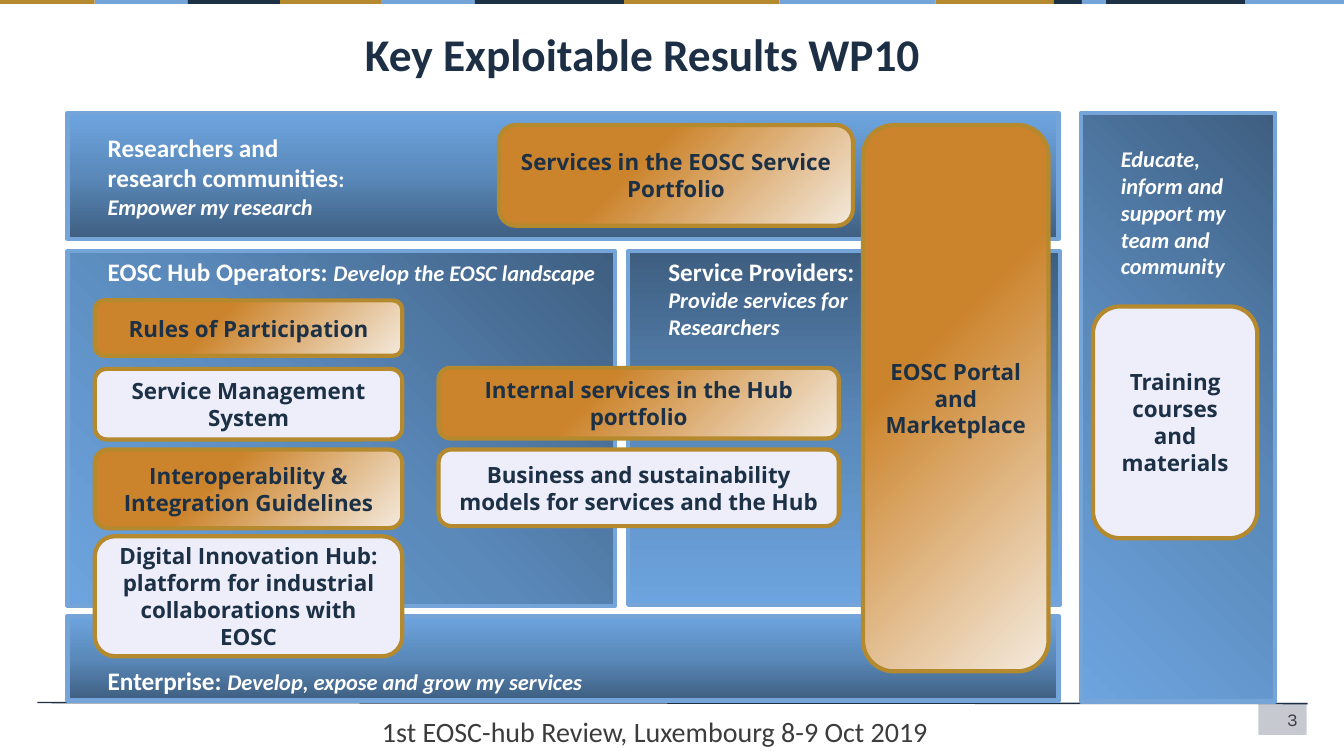
from lxml import etree
from pptx import Presentation
from pptx import util as u
from pptx.dml.color import RGBColor
from pptx.enum import shapes, text
from pptx.oxml import ns

PX = u.Inches(1) // 100
WHITE = RGBColor(0xFF, 0xFF, 0xFF)
NAVY = RGBColor(0x1C, 0x30, 0x46)
INK = RGBColor(0x1D, 0x2F, 0x45)
GREY = RGBColor(0x3C, 0x3C, 0x3C)
GOLD = RGBColor(0xB5, 0x89, 0x2D)
SKY = RGBColor(0x75, 0xA5, 0xD8)
LAVENDER = RGBColor(0xEE, 0xEE, 0xFB)
BLUE_STOPS = [(0, RGBColor(0x3E, 0x5E, 0x80)), (50, RGBColor(0x5A, 0x89, 0xBA)),
              (100, RGBColor(0x6D, 0xA4, 0xDF))]
ORANGE = RGBColor(0xCC, 0x84, 0x2C)
ORANGE_STOPS = [(0, ORANGE), (39, ORANGE), (100, RGBColor(0xF4, 0xEA, 0xDD))]

TITLE = "Key Exploitable Results WP10"
FOOTER = "1st EOSC-hub Review, Luxembourg 8-9 Oct 2019"
SLIDE_NUMBER = "3"

STRIPES = [(0, 94, GOLD), (94, 92, SKY), (186, 92, NAVY), (278, 100, GOLD),
           (378, 93, SKY), (471, 148, NAVY), (619, 154, GOLD), (773, 155, SKY),
           (928, 117, GOLD), (1045, 28, NAVY), (1073, 24, SKY),
           (1097, 138, NAVY), (1235, 98, SKY)]

TOP, MIDDLE, BOTTOM = text.MSO_ANCHOR.TOP, text.MSO_ANCHOR.MIDDLE, text.MSO_ANCHOR.BOTTOM
CORNER = None
PANELS = [
    ((623, 249, 428, 351), 90, TOP, 5,
     [[("Service Providers:", 18, False)],
      [("Provide services for", 16, True)],
      [("Researchers", 16, True)]]),
    ((67, 611, 983, 84), 270, BOTTOM, 5,
     [[("Enterprise: ", 18, False), ("Develop, expose and grow my services", 16, True)]]),
    ((67, 112, 983, 125), 270, MIDDLE, 5,
     [[("Researchers and", 18, False)],
      [("research communities", 18, False), (":", 16, False)],
      [("Empower my research", 16, True)]]),
    ((67, 249, 543, 352), 135, TOP, 5,
     [[("EOSC Hub Operators: ", 18, False), ("Develop the EOSC landscape", 16, True)]]),
    ((1072, 112, 193, 584), CORNER, TOP, 32,
     [[("Educate, inform and support my team and community", 16, True)]]),
]

RESULTS = [
    ((1084, 304, 163, 230), False, ["Training courses and materials"]),
    ((856, 124, 184, 542), True, ["EOSC Portal", "and", "Marketplace"]),
    ((495, 124, 351, 100), True, ["Services in the EOSC Service Portfolio"]),
    ((94, 532, 305, 119), False,
     ["Digital Innovation Hub:", "platform for industrial collaborations with EOSC"]),
    ((94, 298, 305, 55), True, ["Rules of Participation"]),
    ((94, 366, 305, 70), False, ["Service Management System"]),
    ((94, 446, 305, 78), True, ["Interoperability & Integration Guidelines"]),
    ((435, 365, 397, 70), True, ["Internal services in the Hub portfolio"]),
    ((435, 446, 397, 76), False,
     ["Business and sustainability models for services and the Hub"]),
]


def emu(box):
    return [value * PX for value in box]


def add_child(parent, tag, **attributes):
    return etree.SubElement(parent, ns.qn(tag), attributes)


def set_gradient(shape, stops, angle):
    shape.fill.gradient()
    gradient = shape._element.spPr.find(ns.qn("a:gradFill"))
    for child in list(gradient):
        gradient.remove(child)
    stop_list = add_child(gradient, "a:gsLst")
    for position, color in stops:
        stop = add_child(stop_list, "a:gs", pos=str(position * 1000))
        add_child(stop, "a:srgbClr", val=str(color))
    if angle is CORNER:
        radial = add_child(gradient, "a:path", path="circle")
        add_child(radial, "a:fillToRect", l="100000", b="100000")
    else:
        add_child(gradient, "a:lin", ang=str(angle * 60000), scaled="0")


def add_box(slide, kind, box, fill=None, line=None):
    shape = slide.shapes.add_shape(kind, *emu(box))
    shape.shadow.inherit = False
    if fill is not None:
        shape.fill.solid()
        shape.fill.fore_color.rgb = fill
    if line is None:
        shape.line.fill.background()
    else:
        shape.line.color.rgb = line
        shape.line.width = u.Pt(3)
    return shape


def style(paragraph, name, color, size=None, bold=None, align=text.PP_ALIGN.LEFT):
    paragraph.alignment = align
    font = paragraph.font
    font.name, font.bold, font.color.rgb = name, bold, color
    if size:
        font.size = u.Pt(size)


def paragraphs_for(frame, items):
    for index, item in enumerate(items):
        yield (frame.add_paragraph() if index else frame.paragraphs[0]), item


def add_panel(slide, box, angle, anchor, inset, lines):
    shape = add_box(slide, shapes.MSO_SHAPE.RECTANGLE, box, line=SKY)
    set_gradient(shape, BLUE_STOPS, angle)
    frame = shape.text_frame
    frame.word_wrap = True
    frame.vertical_anchor = anchor
    frame.margin_top = inset * PX
    for paragraph, runs in paragraphs_for(frame, lines):
        paragraph._p.get_or_add_pPr().set("marL", str(30 * PX))
        style(paragraph, "Calibri", WHITE, bold=True)
        for words, size, italic in runs:
            run = paragraph.add_run()
            run.text = words
            run.font.size, run.font.italic = u.Pt(size), italic


def add_result(slide, box, highlighted, lines):
    shape = add_box(slide, shapes.MSO_SHAPE.ROUNDED_RECTANGLE, box, LAVENDER, GOLD)
    if highlighted:
        set_gradient(shape, ORANGE_STOPS, 45)
    frame = shape.text_frame
    frame.word_wrap = True
    frame.vertical_anchor = MIDDLE
    for paragraph, words in paragraphs_for(frame, lines):
        paragraph.text = words
        style(paragraph, "Open Sans", NAVY, 16, True, text.PP_ALIGN.CENTER)


def add_label(slide, box, words, name, size, align):
    frame = slide.shapes.add_textbox(*emu(box)).text_frame
    frame.word_wrap = True
    frame.text = words
    style(frame.paragraphs[0], name, GREY, size, align=align)


def add_title(slide):
    title = slide.shapes.title
    title.left, title.top, title.width, title.height = emu((352, 21, 945, 59))
    frame = title.text_frame
    frame.text = TITLE
    frame.auto_size = text.MSO_AUTO_SIZE.NONE
    frame.vertical_anchor = TOP
    style(frame.paragraphs[0], "Calibri", INK, 32.4, True)


def add_footer_rule(slide):
    rule = slide.shapes.add_connector(
        shapes.MSO_CONNECTOR.STRAIGHT, *emu((37, 697, 1297, 698)))
    rule.line.color.rgb = INK
    rule.line.width = u.Pt(1)
    add_child(rule._element.spPr, "a:effectLst")


def main():
    presentation = Presentation()
    presentation.slide_width, presentation.slide_height = emu((1333, 750))
    slide = presentation.slides.add_slide(presentation.slide_layouts[5])
    add_title(slide)
    number_box = add_box(slide, shapes.MSO_SHAPE.RECTANGLE, (1248, 697, 48, 32), INK)
    number_color = number_box._element.spPr.find(".//" + ns.qn("a:srgbClr"))
    add_child(number_color, "a:alpha", val="25000")
    for left, width, color in STRIPES:
        add_box(slide, shapes.MSO_SHAPE.RECTANGLE, (left, 0, width, 4), color)
    add_footer_rule(slide)
    for panel in PANELS:
        add_panel(slide, *panel)
    for result in RESULTS:
        add_result(slide, *result)
    add_label(slide, (369, 704, 569, 31), FOOTER, "Calibri", 20, text.PP_ALIGN.LEFT)
    add_label(slide, (956, 698, 341, 31), SLIDE_NUMBER, "Karla", 13, text.PP_ALIGN.RIGHT)
    presentation.save("out.pptx")


if __name__ == "__main__":
    main()
